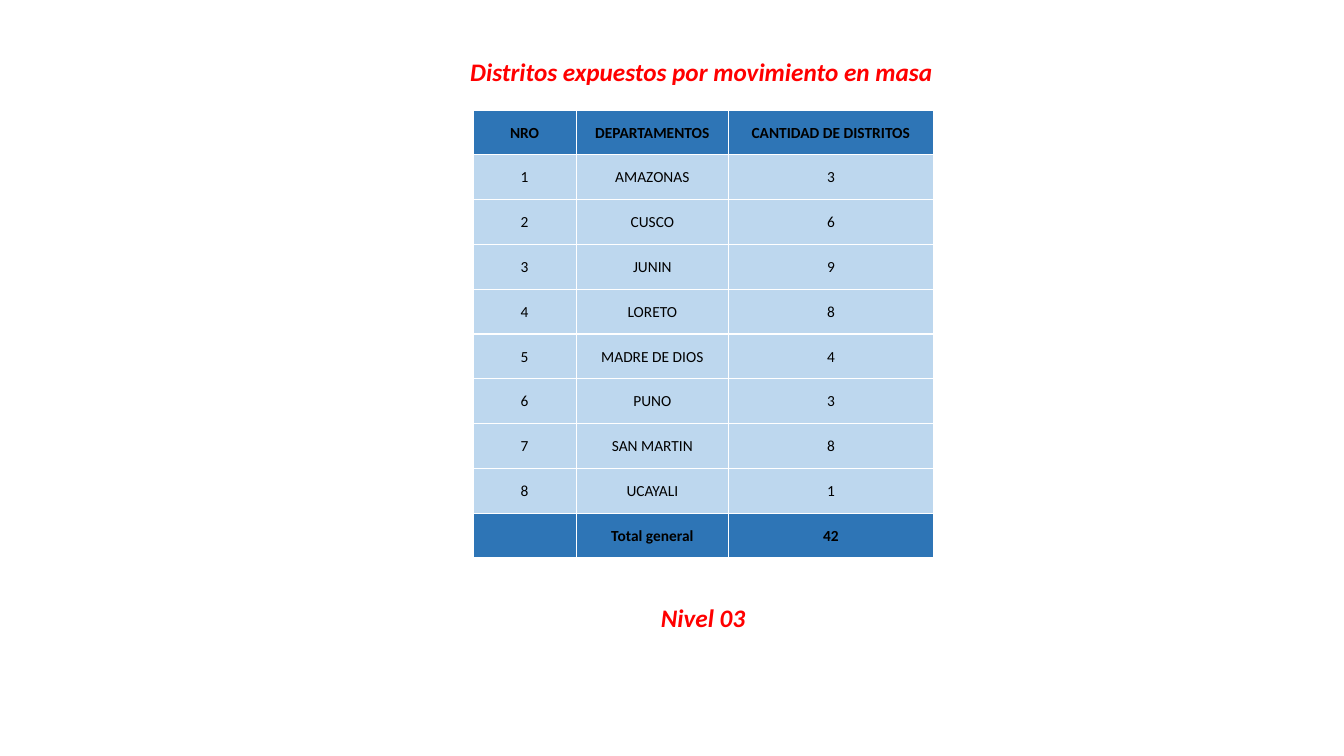
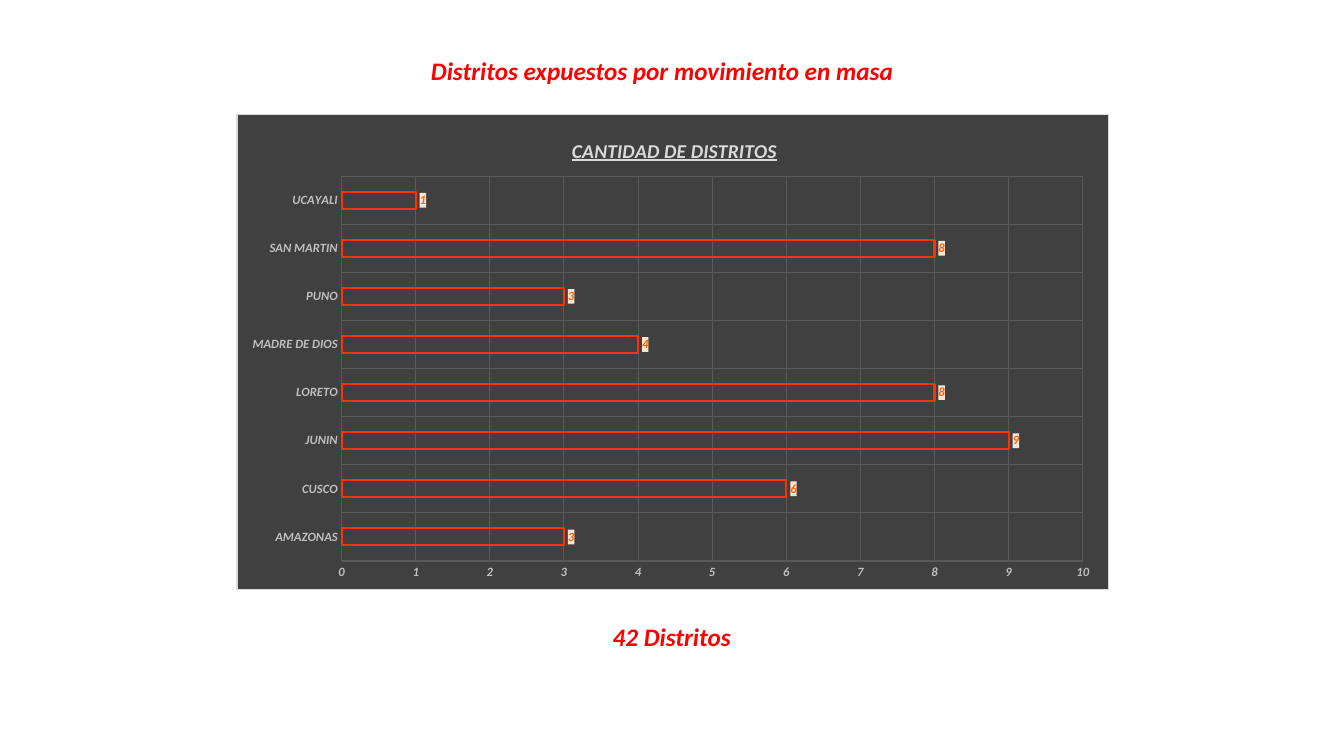
from pptx import Presentation
from pptx.chart.data import CategoryChartData
from pptx.dml.color import RGBColor
from pptx.enum.chart import XL_CHART_TYPE, XL_LABEL_POSITION, XL_TICK_MARK
from pptx.enum.text import MSO_ANCHOR, MSO_AUTO_SIZE, PP_ALIGN
from pptx.oxml import parse_xml
from pptx.oxml.ns import nsdecls, qn
from pptx.util import Cm, Pt

FONT = "Calibri"
COLORS = {
    "heading": "FF0000",
    "text": "000000",
    "header": "2E75B6",
    "body": "BDD7EE",
    "border": "FFFFFF",
    "chart": "404040",
    "frame": "D9D9D9",
    "grid": "595959",
    "axis": "BFBFBF",
    "bar": "FF3300",
    "label": "FF6600",
    "label_fill": "FBE5D6",
}
HEADING = "Distritos expuestos por movimiento en masa"
COUNT_TITLE = "CANTIDAD DE DISTRITOS"
DISTRICTS = {
    "AMAZONAS": 3,
    "CUSCO": 6,
    "JUNIN": 9,
    "LORETO": 8,
    "MADRE DE DIOS": 4,
    "PUNO": 3,
    "SAN MARTIN": 8,
    "UCAYALI": 1,
}
TOTAL = sum(DISTRICTS.values())


def color(name):
    return RGBColor.from_string(COLORS[name])


def style_font(font, size, name, bold=False, italic=False, underline=False):
    font.name, font.size = FONT, Pt(size)
    font.bold, font.italic, font.underline = bold, italic, underline
    font.color.rgb = color(name)


def write(frame, text, **style):
    """Put one centred line, vertically in the middle, in a text frame."""
    frame.vertical_anchor = MSO_ANCHOR.MIDDLE
    para = frame.paragraphs[0]
    para.alignment = PP_ALIGN.CENTER
    span = para.add_run()
    span.text = text
    style_font(span.font, **style)


def solid_fill(name):
    return f'<a:solidFill><a:srgbClr val="{COLORS[name]}"/></a:solidFill>'


def chart_box(fill, line=""):
    """Shape properties for chart parts that have no public format object."""
    return parse_xml(f'<c:spPr {nsdecls("c", "a")}>{solid_fill(fill)}{line}</c:spPr>')


def place(element, index, **fractions):
    """Fix the layout of a chart part, in fractions of the chart."""
    old = element.find(qn("c:layout"))
    if old is not None:
        element.remove(old)
    target = '<c:layoutTarget val="inner"/>' if "w" in fractions else ""
    modes = "".join(f'<c:{key}Mode val="edge"/>' for key in "xy")
    values = "".join(f'<c:{key} val="{value}"/>' for key, value in fractions.items())
    element.insert(index, parse_xml(
        f'<c:layout {nsdecls("c")}><c:manualLayout>{target}{modes}{values}'
        "</c:manualLayout></c:layout>"))


class Deck:
    heading_style = {"size": 18, "name": "heading", "bold": True, "italic": True}

    def __init__(self):
        self.deck = Presentation()
        self.deck.slide_width, self.deck.slide_height = Cm(33.87), Cm(19.05)
        self.page = None

    def add_page(self, left, top):
        self.page = self.deck.slides.add_slide(self.deck.slide_layouts[5])
        box = self.page.shapes.title
        box.left, box.top, box.width, box.height = Cm(left), Cm(top), Cm(12.29), Cm(1.02)
        self.fill_heading(box, HEADING)

    def add_caption(self, text, left, top, width):
        box = self.page.shapes.add_textbox(Cm(left), Cm(top), Cm(width), Cm(1.02))
        self.fill_heading(box, text)

    def fill_heading(self, box, text):
        frame = box.text_frame
        frame.word_wrap = False
        frame.auto_size = MSO_AUTO_SIZE.NONE
        write(frame, text, **self.heading_style)

    def add_table(self, rows, left, top, widths, row_height):
        table = self.page.shapes.add_table(
            len(rows), len(widths), Cm(left), Cm(top),
            Cm(sum(widths)), Cm(row_height * len(rows))).table
        table.first_row = table.horz_banding = False
        for column, width in zip(table.columns, widths):
            column.width = Cm(width)
        for index, values in enumerate(rows):
            table.rows[index].height = Cm(row_height)
            strong = index in (0, len(rows) - 1)
            for position, value in enumerate(values):
                self.fill_cell(table.cell(index, position), value, strong)

    def fill_cell(self, cell, value, strong):
        cell.margin_left = cell.margin_right = cell.margin_top = Cm(0.02)
        cell.margin_bottom = 0
        cell.vertical_anchor = MSO_ANCHOR.MIDDLE
        cell.fill.solid()
        cell.fill.fore_color.rgb = color("header" if strong else "body")
        properties = cell._tc.get_or_add_tcPr()
        for index, side in enumerate("LRTB"):
            properties.insert(index, parse_xml(
                f'<a:ln{side} {nsdecls("a")} w="{Pt(1)}">'
                f'{solid_fill("border")}</a:ln{side}>'))
        if value != "":
            write(cell.text_frame, str(value), size=11, name="text", bold=strong)

    def add_bar_chart(self, counts, left, top, width, height):
        data = CategoryChartData(number_format="#,##0")
        data.categories = list(counts)
        data.add_series(COUNT_TITLE, list(counts.values()))
        chart = self.page.shapes.add_chart(
            XL_CHART_TYPE.BAR_CLUSTERED, Cm(left), Cm(top), Cm(width), Cm(height), data).chart
        chart.has_legend = False
        style_font(chart.font, 10, "text")
        frame_line = f'<a:ln w="{Pt(0.75)}">{solid_fill("frame")}</a:ln>'
        body = chart.element.find(qn("c:chart"))
        body.addnext(chart_box("chart", frame_line))

        chart.has_title = True
        write(chart.chart_title.text_frame, COUNT_TITLE,
              size=14, name="frame", bold=True, italic=True, underline=True)
        place(chart.chart_title.element, 1, x=0.38, y=0.04)
        place(body.find(qn("c:plotArea")), 0, x=0.12, y=0.13, w=0.85, h=0.81)

        for axis in (chart.category_axis, chart.value_axis):
            self.style_axis(axis)
        values = chart.value_axis
        values.minimum_scale, values.maximum_scale, values.major_unit = 0, 10, 1
        values.tick_labels.number_format = "#,##0"
        values.tick_labels.number_format_is_linked = False
        self.style_bars(chart.plots[0])
        label_text = next(body.iter(qn("c:dLbls"))).find(qn("c:txPr"))
        label_text.addprevious(chart_box("label_fill"))

    def style_axis(self, axis):
        axis.major_tick_mark = axis.minor_tick_mark = XL_TICK_MARK.NONE
        axis.format.line.fill.background()
        axis.has_major_gridlines = True
        line = axis.major_gridlines.format.line
        line.width, line.color.rgb = Pt(0.75), color("grid")
        style_font(axis.tick_labels.font, 9, "axis", bold=True, italic=True)

    def style_bars(self, plot):
        plot.gap_width, plot.overlap = 182, -50
        plot.vary_by_categories = False
        bars = plot.series[0]
        bars.format.fill.background()
        bars.format.line.width = Pt(1.5)
        bars.format.line.color.rgb = color("bar")
        labels = bars.data_labels
        labels.show_value = True
        labels.number_format, labels.number_format_is_linked = "#,##0", False
        labels.position = XL_LABEL_POSITION.OUTSIDE_END
        style_font(labels.font, 9, "label", bold=True, italic=True)


def main():
    deck = Deck()

    deck.add_page(11.53, 1.3)
    deck.add_caption("Nivel 03", 16.36, 15.06, 2.72)
    rows = [("NRO", "DEPARTAMENTOS", COUNT_TITLE)]
    rows += [(number, *item) for number, item in enumerate(DISTRICTS.items(), 1)]
    rows.append(("", "Total general", TOTAL))
    deck.add_table(rows, 11.92, 2.77, (2.6, 3.84, 5.16), 1.13)

    deck.add_page(10.54, 1.27)
    deck.add_caption(f"{TOTAL} Distritos", 14.81, 15.52, 4.24)
    deck.add_bar_chart(DISTRICTS, 5.96, 2.87, 22, 12)

    deck.deck.save("out.pptx")


if __name__ == "__main__":
    main()
